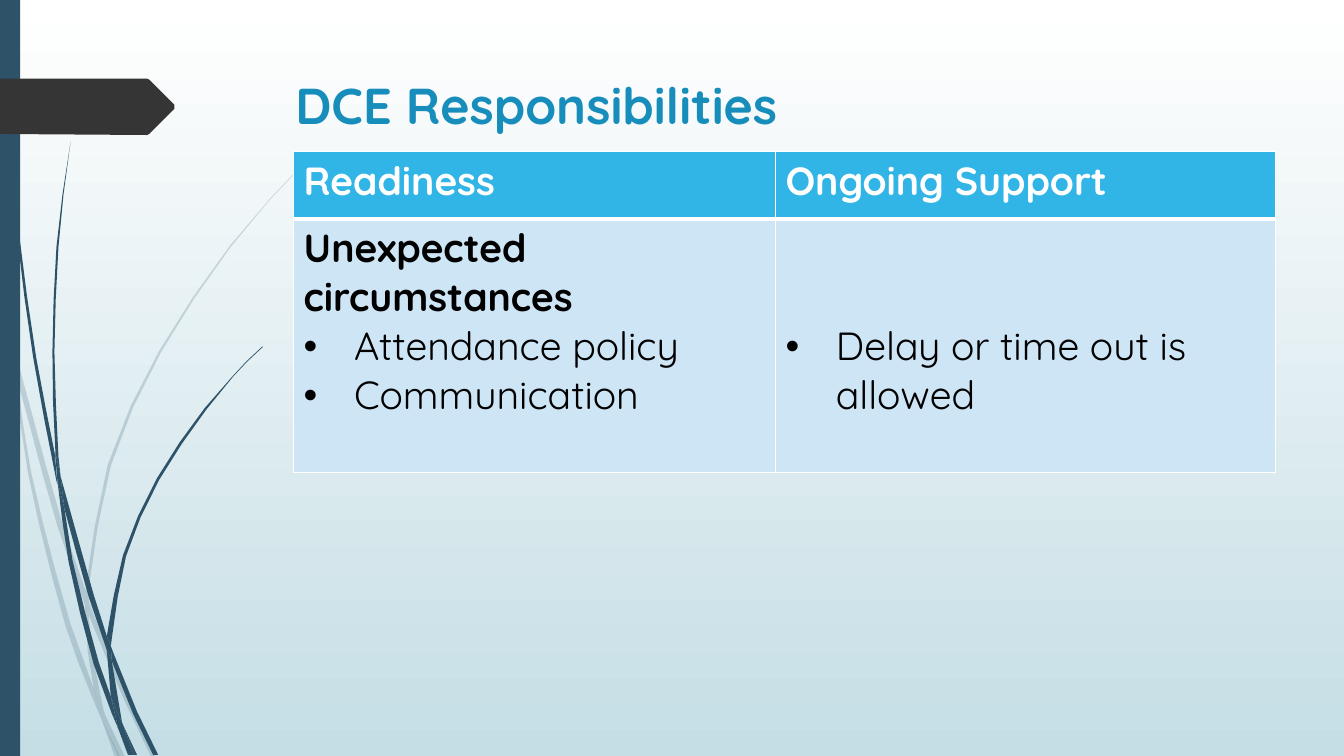
import math
from dataclasses import dataclass
from typing import Iterator

import pptx
import pptx.dml.color
import pptx.enum.shapes
import pptx.enum.text
import pptx.oxml
import pptx.oxml.ns
import pptx.util
from pptx.util import Pt

Point = tuple[float, float]
Edge = tuple[Point, ...]
Outline = tuple[Edge, ...]


@dataclass(frozen=True)
class Theme:
    font: str = "Quicksand"
    title_size: float = 36
    table_size: float = 28
    title: str = "178DBB"
    stalk: str = "2E5369"
    tag: str = "353535"
    header: str = "31B4E6"
    body: str = "CEE5F5"
    white: str = "FFFFFF"
    black: str = "000000"
    sky_bottom: str = "C5DEE5"


@dataclass(frozen=True)
class Line:
    text: str
    bold: bool = False
    bullet: bool = False


@dataclass(frozen=True)
class CellSpec:
    lines: list[Line]
    fill: str
    ink: str
    top_rule: float = 1
    bottom_rule: float = 1
    top_margin: float = 3.6


@dataclass(frozen=True)
class Plant:
    """Blades of grass, each outlined by edges on a grid of 0.72 points."""
    opacity: int
    blades: list[Outline]


THEME = Theme()
GRID = 0.72
FINE = 10  # freeform units per grid step
LONGEST = 70  # grid steps spanned by one straight piece of a curve

FADED = Plant(20, [
    (((11, 350), (9, 322), (0, 282)), ((0, 299), (10, 344))),
    (((17, 376), (57, 522), (84, 599)), ((85, 586), (62, 520), (14, 345))),
    (((88, 596), (92, 607), (127, 692), (155, 751)), ((150, 751), (123, 694), (88, 610))),
    (((105, 711), (124, 751)), ((119, 751),)),
    (((11, 350), (28, 470), (65, 621), (92, 693), (101, 714)),
     ((99, 707), (93, 683), (70, 619), (31, 469), (17, 376))),
    (((84, 599), (87, 646), (93, 683), (96, 692), (105, 711)),
     ((103, 706), (91, 646), (88, 610), (88, 608))),
    (((88, 596), (88, 584), (110, 462), (160, 349), (229, 245), (268, 198), (290, 175), (312, 154)),
     ((312, 153), (289, 175), (268, 197), (228, 244), (158, 348), (107, 461), (85, 584), (85, 586))),
    (((101, 714), (114, 751)), ((119, 751),)),
    (((84, 599), (88, 608), (88, 610)), ((88, 596), (85, 586))),
    (((93, 683), (99, 707), (101, 714), (118, 751)), ((119, 751), (105, 711), (96, 692))),
])
DARK = Plant(100, [
    (((3, 0), (4, 48), (7, 110), (17, 233), (33, 355), (56, 477), (57, 481)),
     ((55, 457), (55, 453), (36, 355), (19, 232), (8, 109), (5, 48), (4, 0))),
    (((64, 505), (88, 592), (106, 645)), ((106, 633), (106, 631), (93, 590), (60, 472))),
    (((110, 641), (113, 649), (136, 706), (157, 749)), ((152, 749), (132, 708), (111, 656))),
    (((57, 477), (68, 557), (93, 659), (111, 708), (117, 722)),
     ((116, 717), (110, 691), (98, 657), (72, 556), (64, 505))),
    (((70, 141), (62, 193), (56, 245), (52, 349), (55, 449), (60, 472)),
     ((58, 453), (54, 349), (58, 245), (63, 193), (70, 141))),
    (((122, 719), (133, 749)), ((136, 749),)),
    (((55, 449), (55, 453), (57, 477), (64, 505)), ((60, 472),)),
    (((110, 641), (111, 633), (125, 552), (158, 476), (205, 406), (231, 374), (245, 359), (261, 344)),
     ((260, 344), (245, 358), (231, 373), (203, 405), (156, 474), (122, 551), (106, 631))),
    (((117, 722), (127, 749)), ((131, 749),)),
    (((106, 645), (110, 691), (116, 706), (122, 719)), ((121, 716), (111, 656), (109, 651))),
    (((106, 631), (106, 633), (106, 645)), ((109, 651), (111, 656), (110, 641))),
    (((110, 691), (116, 717), (117, 722), (130, 749)), ((133, 749), (122, 719), (116, 706))),
])
TAG: Outline = (((0, 78), (146, 78)), ((148, 79), (173, 104)),
                ((173, 108), (148, 133)), ((146, 134), (0, 133)))

ROWS = [
    [CellSpec([Line(name, bold=True)], THEME.header, THEME.white, bottom_rule=3)
     for name in ("Readiness", "Ongoing Support")],
    [CellSpec([Line("Unexpected circumstances", bold=True),
               Line("Attendance policy", bullet=True),
               Line("Communication", bullet=True)], THEME.body, THEME.black, top_rule=3),
     CellSpec([Line("Delay or time out is allowed", bullet=True)],
              THEME.body, THEME.black, top_rule=3, top_margin=73.6)],
]


def rgb(value: str) -> pptx.dml.color.RGBColor:
    return pptx.dml.color.RGBColor.from_string(value)


def element(xml: str):
    head, tail = xml.split(" ", 1)
    return pptx.oxml.parse_xml(f"{head} {pptx.oxml.ns.nsdecls('a')} {tail}")


def smooth(edge: Edge) -> Iterator[Point]:
    """Yield points on a curve through the edge, with tangents as long as each chord."""
    last = len(edge) - 1
    yield edge[0]
    for i in range(last):
        start, end = edge[i], edge[i + 1]
        chord = math.dist(start, end)
        slopes = []
        for k in (i, i + 1):
            before, after = edge[max(k - 1, 0)], edge[min(k + 1, last)]
            length = math.dist(before, after) or 1
            slopes.append([(b - a) * chord / length for a, b in zip(before, after)])
        steps = math.ceil(chord / LONGEST) if last > 1 else 1
        for step in range(1, steps + 1):
            t = step / steps
            x, y = (a + (b - a) * t * t * (3 - 2 * t)
                    + m * t * (1 - t) ** 2 - n * t * t * (1 - t)
                    for a, b, m, n in zip(start, end, *slopes))
            yield x, y


def paint(shape, color: str, opacity: int = 100) -> None:
    shape.shadow.inherit = False
    shape.line.fill.background()
    shape.fill.solid()
    shape.fill.fore_color.rgb = rgb(color)
    if opacity < 100:
        tint = shape.element.spPr.find(".//" + pptx.oxml.ns.qn("a:srgbClr"))
        tint.append(element(f'<a:alpha val="{opacity * 1000}"/>'))


def draw_outline(page, outline: Outline, color: str, opacity: int = 100) -> None:
    points = [(x * FINE, y * FINE) for edge in outline for x, y in smooth(edge)]
    builder = page.shapes.build_freeform(*points[0], scale=Pt(GRID) / FINE)
    builder.add_line_segments(points[1:], close=True)
    paint(builder.convert_to_shape(), color, opacity)


def add_span(para, text: str, size: float, color: str, bold: bool) -> None:
    span = para.add_run()
    span.text = text
    span.font.name = THEME.font
    span.font.size = Pt(size)
    span.font.bold = bold
    span.font.color.rgb = rgb(color)


def add_bullet(para) -> None:
    properties = para._p.get_or_add_pPr()
    properties.set("marL", str(Pt(36)))
    properties.set("indent", str(Pt(-36)))
    properties.append(element('<a:buFont typeface="Arial"/>'))
    properties.append(element('<a:buChar char="•"/>'))


def fill_cell(cell, spec: CellSpec) -> None:
    cell.fill.solid()
    cell.fill.fore_color.rgb = rgb(spec.fill)
    cell.margin_top = Pt(spec.top_margin)
    rules = {"L": 1, "R": 1, "T": spec.top_rule, "B": spec.bottom_rule}
    for place, (side, width) in enumerate(rules.items()):
        cell._tc.get_or_add_tcPr().insert(place, element(
            f'<a:ln{side} w="{Pt(width)}"><a:solidFill><a:srgbClr val="{THEME.white}"/>'
            f'</a:solidFill></a:ln{side}>'))
    for i, line in enumerate(spec.lines):
        para = cell.text_frame.add_paragraph() if i else cell.text_frame.paragraphs[0]
        if line.bullet:
            add_bullet(para)
        add_span(para, line.text, THEME.table_size, spec.ink, line.bold)


def paint_background(page) -> None:
    fill = page.background.fill
    fill.gradient()
    fill.gradient_angle = 270
    for stop, color in zip(fill.gradient_stops, (THEME.white, THEME.sky_bottom)):
        stop.color.rgb = rgb(color)


def place_title(page, text: str) -> None:
    title = page.shapes.title
    title.left, title.top, title.width, title.height = Pt(203.8), Pt(49), Pt(701.3), Pt(70.6)
    frame = title.text_frame
    frame.word_wrap = True
    frame.vertical_anchor = pptx.enum.text.MSO_ANCHOR.TOP
    para = frame.paragraphs[0]
    para.alignment = pptx.enum.text.PP_ALIGN.LEFT
    add_span(para, text, THEME.title_size, THEME.title, True)


def add_duties_table(page) -> None:
    widths, heights = (344.2, 357.1), (48, 181.5)
    table = page.shapes.add_table(len(heights), len(widths), Pt(209.7), Pt(108.3),
                                  Pt(sum(widths)), Pt(sum(heights))).table
    table.horz_banding = False
    for column, width in zip(table.columns, widths):
        column.width = Pt(width)
    for row, height, specs in zip(table.rows, heights, ROWS):
        row.height = Pt(height)
        for cell, spec in zip(row.cells, specs):
            fill_cell(cell, spec)


def main() -> None:
    deck = pptx.Presentation()
    deck.slide_width, deck.slide_height = Pt(960), Pt(540)
    page = deck.slides.add_slide(deck.slide_layouts.get_by_name("Title Only"))
    paint_background(page)
    for plant in (FADED, DARK):
        for blade in plant.blades:
            draw_outline(page, blade, THEME.stalk, plant.opacity)
    bar = page.shapes.add_shape(pptx.enum.shapes.MSO_SHAPE.RECTANGLE, 0, 0, Pt(14.4), Pt(540))
    paint(bar, THEME.stalk)
    draw_outline(page, TAG, THEME.tag)
    place_title(page, "DCE Responsibilities")
    add_duties_table(page)
    deck.save("out.pptx")


if __name__ == "__main__":
    main()
